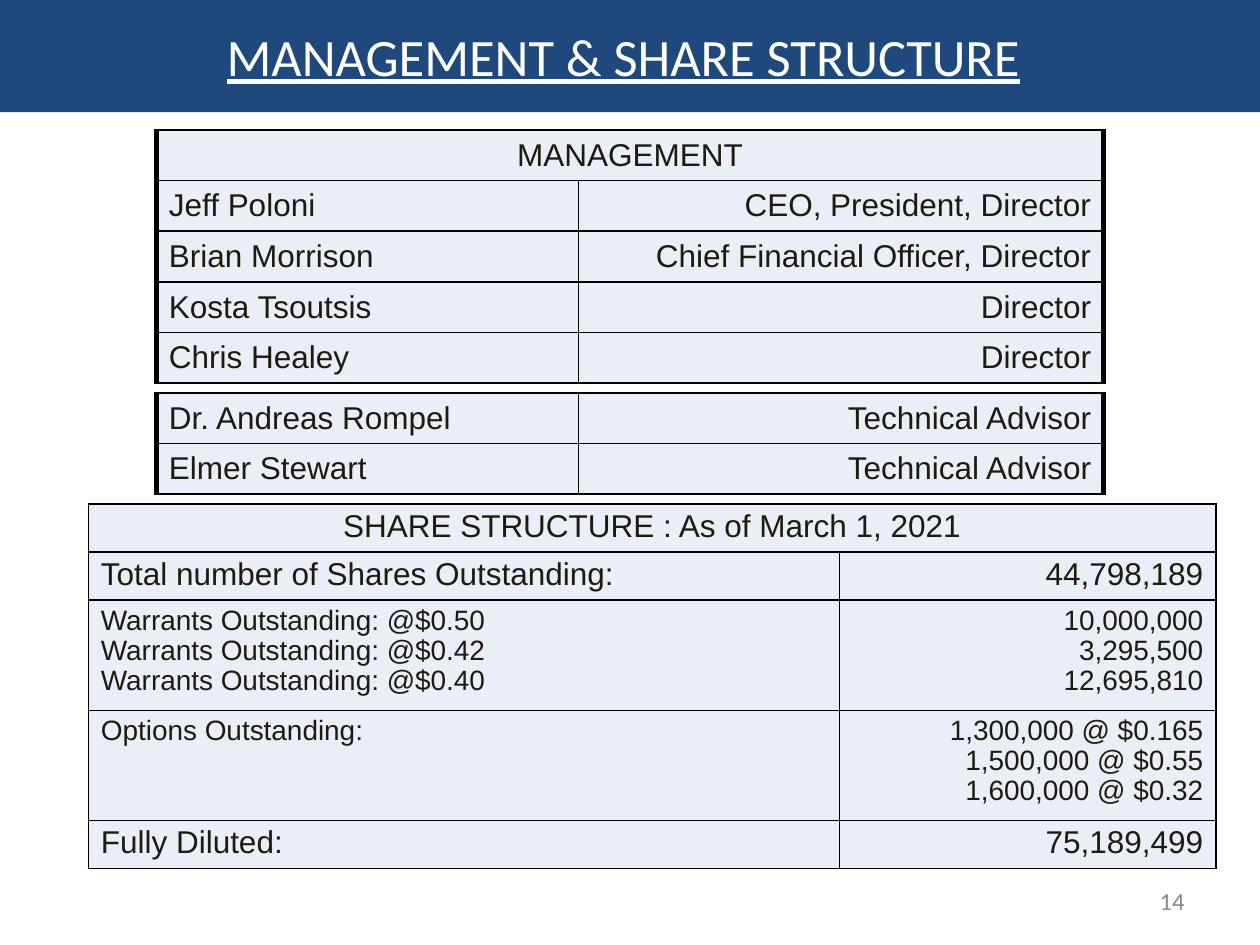
from pptx import Presentation
from pptx.dml.color import RGBColor
from pptx.enum.shapes import MSO_SHAPE
from pptx.enum.text import MSO_ANCHOR, PP_ALIGN
from pptx.oxml import parse_xml
from pptx.oxml.ns import nsdecls
from pptx.util import Cm, Pt

NAVY = RGBColor(0x1F, 0x49, 0x7D)
WHITE = RGBColor(0xFF, 0xFF, 0xFF)
PALE_BLUE = RGBColor(0xEA, 0xEF, 0xF7)
INK = RGBColor(0x1D, 0x1B, 0x10)
GREY = RGBColor(0x88, 0x88, 0x88)
BLACK = RGBColor(0x00, 0x00, 0x00)

MANAGEMENT = [
    ["MANAGEMENT"],
    ["Jeff Poloni", "CEO, President, Director"],
    ["Brian Morrison", "Chief Financial Officer, Director"],
    ["Kosta Tsoutsis", "Director"],
    ["Chris Healey", "Director"],
]
ADVISORS = [
    ["Dr. Andreas Rompel", "Technical Advisor"],
    ["Elmer Stewart", "Technical Advisor"],
]
SHARES = [
    ["SHARE STRUCTURE : As of March 1, 2021"],
    ["Total number of Shares Outstanding:", "44,798,189"],
    [
        "Warrants Outstanding: @$0.50\nWarrants Outstanding: @$0.42\nWarrants Outstanding: @$0.40",
        "10,000,000\n3,295,500\n12,695,810",
    ],
    ["Options Outstanding:", "1,300,000 @ $0.165\n1,500,000 @ $0.55\n1,600,000 @ $0.32"],
    ["Fully Diluted:", "75,189,499"],
]


def style_paragraph(para, font, size, color, align):
    para.alignment = align
    para.font.name = font
    para.font.size = Pt(size)
    para.font.color.rgb = color


def add_border(cell, side, width):
    cell._tc.get_or_add_tcPr().append(parse_xml(
        f'<a:{side} {nsdecls("a")} w="{Pt(width)}"><a:solidFill>'
        f'<a:srgbClr val="{BLACK}"/></a:solidFill></a:{side}>'
    ))


def style_cell(cell, left_width, right_width, anchor):
    for side, width in (("lnL", left_width), ("lnR", right_width), ("lnT", 1), ("lnB", 1)):
        add_border(cell, side, width)
    cell.fill.solid()
    cell.fill.fore_color.rgb = PALE_BLUE
    cell.vertical_anchor = anchor


def fill_cell(cell, text, size, align, spacing):
    cell.text_frame.text = text
    for para in cell.text_frame.paragraphs:
        style_paragraph(para, "Arial", size, INK, align)
        para.line_spacing = spacing


def add_grid(page, rows, left, top, widths, heights, side_width=1,
             anchor=MSO_ANCHOR.MIDDLE, spacing=1.0):
    frame = page.shapes.add_table(
        len(rows), 2, Cm(left), Cm(top), Cm(sum(widths)), Cm(sum(heights)))
    table = frame.table
    table.first_row = table.horz_banding = False
    for column, width in zip(table.columns, widths):
        column.width = Cm(width)
    for index, (texts, height) in enumerate(zip(rows, heights)):
        table.rows[index].height = Cm(height)
        name, value = table.cell(index, 0), table.cell(index, 1)
        heading = len(texts) == 1
        style_cell(name, side_width, side_width if heading else 1, anchor)
        style_cell(value, 1, side_width, anchor)
        if heading:
            name.merge(value)
            aligns = [PP_ALIGN.CENTER]
        else:
            aligns = [PP_ALIGN.LEFT, PP_ALIGN.RIGHT]
        size = 16 if "\n" in texts[-1] else 18
        for cell, text, align in zip((name, value), texts, aligns):
            fill_cell(cell, text, size, align, spacing)


def add_title(page):
    title = page.shapes.title
    title.left, title.top, title.width, title.height = Cm(4.24), Cm(0.36), Cm(16.66), Cm(1.55)
    title.text_frame.text = "MANAGEMENT & SHARE STRUCTURE"
    title.text_frame.word_wrap = False
    title.text_frame.vertical_anchor = MSO_ANCHOR.TOP
    para = title.text_frame.paragraphs[0]
    style_paragraph(para, "Calibri", 30, WHITE, PP_ALIGN.CENTER)
    para.font.underline = True


def add_title_band(page):
    band = page.shapes.add_shape(MSO_SHAPE.RECTANGLE, 0, 0, Cm(25.4), Cm(2.26))
    band.shadow.inherit = False
    band.fill.solid()
    band.fill.fore_color.rgb = NAVY
    band.line.fill.background()
    page.shapes.title.element.addprevious(band.element)


def add_page_number(page, number):
    box = page.shapes.add_textbox(Cm(18.21), Cm(17.65), Cm(5.92), Cm(1.02))
    box.text_frame.word_wrap = True
    box.text_frame.vertical_anchor = MSO_ANCHOR.MIDDLE
    box.text_frame.text = number
    style_paragraph(box.text_frame.paragraphs[0], "Calibri", 14, GREY, PP_ALIGN.RIGHT)


def main():
    deck = Presentation()
    deck.slide_width, deck.slide_height = Cm(25.4), Cm(19.05)
    page = deck.slides.add_slide(deck.slide_layouts[5])
    add_title(page)
    add_title_band(page)
    people_widths = [8.51, 10.59]
    add_grid(page, MANAGEMENT, 3.15, 2.62, people_widths, [1.02] * 5, side_width=3)
    add_grid(page, ADVISORS, 3.15, 7.92, people_widths, [1.02] * 2, side_width=3)
    add_grid(page, SHARES, 1.78, 10.16, [15.14, 7.59], [0.97, 0.97, 2.22, 2.22, 0.97],
             anchor=MSO_ANCHOR.TOP, spacing=0.96)
    add_page_number(page, "14")
    deck.save("out.pptx")


if __name__ == "__main__":
    main()
